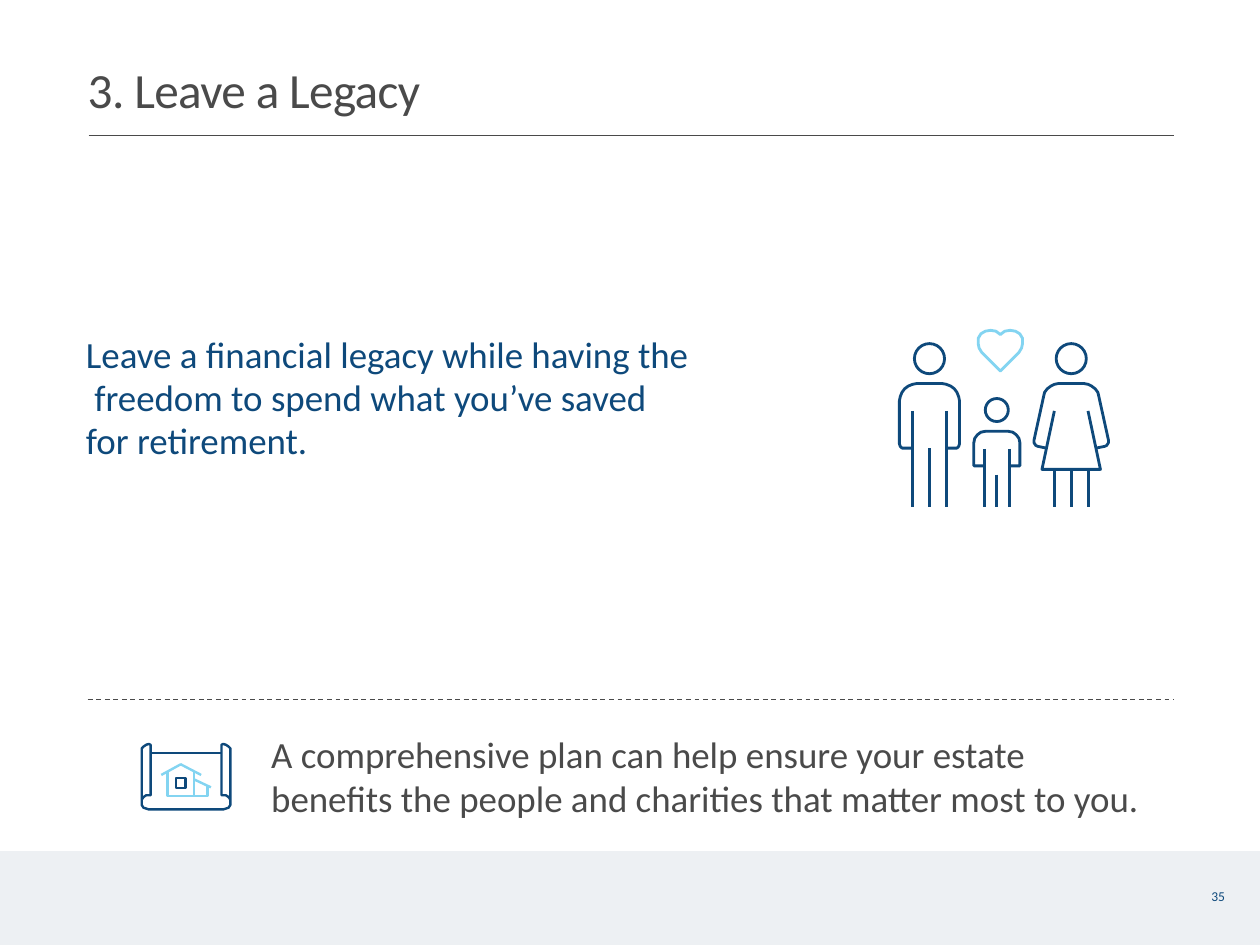
from pptx import Presentation
from pptx.dml.color import RGBColor
from pptx.enum import dml, shapes, text
from pptx.oxml.ns import qn
from pptx.util import Inches, Pt
from lxml import etree

HUES = {"navy": "0E497B", "sky": "83D4F1", "gray": "4A4A4A", "band": "EDF0F3"}
SIZE = (14.22, 10.67)

# box (left, top, width, height), top inset, words, hue and paragraph format
TITLE = dict(box=(0.99, 0.66, 8, 0.69), inset=0.01, words="3. Leave a Legacy",
             hue="gray", size=40, para={"space_before": Pt(1)})
CLAIM = dict(box=(0.97, 3.72, 6.86, 1.5), inset=0.04, hue="navy", size=30,
             words="Leave a financial legacy while having the\v freedom to spend "
                   "what you’ve saved\vfor retirement.",
             para={"space_before": Pt(3), "line_spacing": Pt(35)})
PLAN = dict(box=(3.06, 8.25, 9.89, 1.02), inset=0.01, hue="gray", size=30,
            words="A comprehensive plan can help ensure your estate\v"
                  "benefits the people and charities that matter most to you.",
            para={"space_before": Pt(1)})
PAGE = dict(box=(13.67, 10.02, 0.28, 0.2), inset=0.01, words="35", hue="navy",
            size=11, para={"space_before": Pt(1)})

# Each figure: centre x, head (middle y, diameter), right halves of its
# symmetric outlines, and legs (offset from centre, top)
FOOT = 5.72
FAMILY = [
    dict(mid=10.49, head=(4.05, 0.34), legs=[(-0.19, 4.64), (0, 5.06), (0.19, 4.64)],
         halves=[[(0, 4.33), (0.14, 4.33), (0.19, 4.34), (0.24, 4.36), (0.28, 4.39),
                  (0.31, 4.43), (0.33, 4.48), (0.34, 4.53), (0.34, 5.01), (0.33, 5.04),
                  (0.31, 5.06), (0.29, 5.06), (0.19, 5.06)]]),
    dict(mid=12.09, head=(4.05, 0.34), legs=[(-0.19, 5.3), (0, 5.3), (0.19, 5.3)],
         halves=[[(0, 4.33), (0.14, 4.33), (0.19, 4.34), (0.23, 4.36), (0.27, 4.39),
                  (0.3, 4.43), (0.31, 4.47), (0.42, 4.97), (0.42, 5), (0.4, 5.03),
                  (0.38, 5.04), (0.28, 5.06)],
                 [(0, 5.3), (0.33, 5.3), (0.19, 4.64)]]),
    dict(mid=11.25, head=(4.63, 0.26), legs=[(-0.14, 5.07), (0, 5.36), (0.14, 5.07)],
         halves=[[(0, 4.87), (0.13, 4.87), (0.18, 4.88), (0.22, 4.91), (0.25, 4.95),
                  (0.26, 5), (0.26, 5.26), (0.14, 5.26)]]),
]
HEART = [(0, 3.78), (0.01, 3.77), (0.05, 3.74), (0.11, 3.73), (0.17, 3.74),
         (0.22, 3.77), (0.25, 3.82), (0.25, 3.88), (0.24, 3.93), (0.21, 3.98), (0, 4.19)]
SCROLL = [(0, 9.14), (0.42, 9.14), (0.45, 9.13), (0.48, 9.12), (0.5, 9.09), (0.5, 8.48),
          (0.5, 8.45), (0.48, 8.43), (0.45, 8.41), (0.42, 8.4), (0.4, 8.41), (0.4, 8.98),
          (0.45, 8.98), (0.48, 9), (0.5, 9.03), (0.5, 9.06)]
HOUSE = [
    [(2.19, 8.71), (2.19, 8.99), (1.89, 8.99), (1.89, 8.72)],
    [(2.34, 8.88), (2.34, 8.99), (2.03, 8.99)],
    [(1.82, 8.75), (2.04, 8.63), (2.27, 8.75)],
]
THICK, THIN = 2.31, 1.95

deck = Presentation()
deck.slide_width, deck.slide_height = map(Inches, SIZE)
slide = deck.slides.add_slide(deck.slide_layouts[3])
draw = slide.shapes


def color(hue):
    return RGBColor.from_string(HUES[hue])


def ink(item, hue, width):
    item.line.color.rgb = color(hue)
    item.line.width = Pt(width)


def rule(start, end, hue, width):
    line = draw.add_connector(shapes.MSO_CONNECTOR.STRAIGHT,
                              *map(Inches, start + end))
    ink(line, hue, width)
    etree.SubElement(line._element.spPr, qn("a:effectLst"))
    return line


def trace(points, hue, width, close=False):
    dots = [(Inches(x), Inches(y)) for x, y in points]
    pen = draw.build_freeform(*dots[0])
    pen.add_line_segments(dots[1:], close=close)
    shape = pen.convert_to_shape()
    shape.shadow.inherit = False
    shape.fill.background()
    ink(shape, hue, width)


def mirror(half, mid):
    """Join a right half with its reflection about x = mid."""
    left = [(mid - x, y) for x, y in reversed(half)]
    return left + [(mid + x, y) for x, y in half[1:]]


def solid(kind, box, hue):
    shape = draw.add_shape(kind, *map(Inches, box))
    shape.shadow.inherit = False
    shape.fill.solid()
    shape.fill.fore_color.rgb = color(hue)
    shape.line.fill.background()


def ring(kind, mid, y, wide, hue, width):
    box = (mid - wide / 2, y - wide / 2, wide, wide)
    shape = draw.add_shape(kind, *map(Inches, box))
    shape.shadow.inherit = False
    shape.fill.background()
    ink(shape, hue, width)


def write(shape, box, inset, words, hue, size, para):
    shape.left, shape.top, shape.width, shape.height = map(Inches, box)
    frame = shape.text_frame
    frame.text = words
    look = dict(margin_left=0, margin_right=0, margin_bottom=0,
                margin_top=Inches(inset), word_wrap=True,
                auto_size=text.MSO_AUTO_SIZE.NONE,
                vertical_anchor=text.MSO_ANCHOR.TOP)
    for key, value in look.items():
        setattr(frame, key, value)
    line = frame.paragraphs[0]
    for key, value in dict(para, alignment=text.PP_ALIGN.LEFT).items():
        setattr(line, key, value)
    props = line._p.get_or_add_pPr()
    props.set("marL", "0")
    props.set("indent", "0")
    etree.SubElement(props, qn("a:buNone"))
    for run in line.runs:
        for key, value in dict(name="Calibri", size=Pt(size), bold=False).items():
            setattr(run.font, key, value)
        run.font.color.rgb = color(hue)


solid(shapes.MSO_SHAPE.RECTANGLE, (0, 9.61, SIZE[0], 1.06), "band")

title, claim, plan = slide.placeholders
page = draw.add_textbox(0, 0, 0, 0)
for shape, part in zip((title, claim, plan, page), (TITLE, CLAIM, PLAN, PAGE)):
    write(shape, **part)
for run in title.text_frame.paragraphs[0].runs:
    run._r.get_or_add_rPr().set("spc", "-50")

rule((1, 1.53), (13.25, 1.53), "gray", 1)
split = rule((0.99, 7.9), (13.24, 7.9), "gray", 1)
split.line.dash_style = dml.MSO_LINE.DASH

trace(mirror(HEART, 11.29), "sky", THICK, close=True)
for one in FAMILY:
    mid = one["mid"]
    ring(shapes.MSO_SHAPE.OVAL, mid, *one["head"], "navy", THICK)
    for half in one["halves"]:
        trace(mirror(half, mid), "navy", THICK)
    for step, top in one["legs"]:
        rule((mid + step, top), (mid + step, FOOT), "navy", THICK)

for points in HOUSE:
    trace(points, "sky", THIN)
rule((2.19, 8.8), (2.38, 8.89), "sky", THIN)
trace(mirror(SCROLL, 2.1), "navy", THIN)
rule((1.7, 8.5), (2.5, 8.5), "navy", THIN)
ring(shapes.MSO_SHAPE.RECTANGLE, 2.04, 8.84, 0.11, "navy", THIN)

deck.save("out.pptx")
